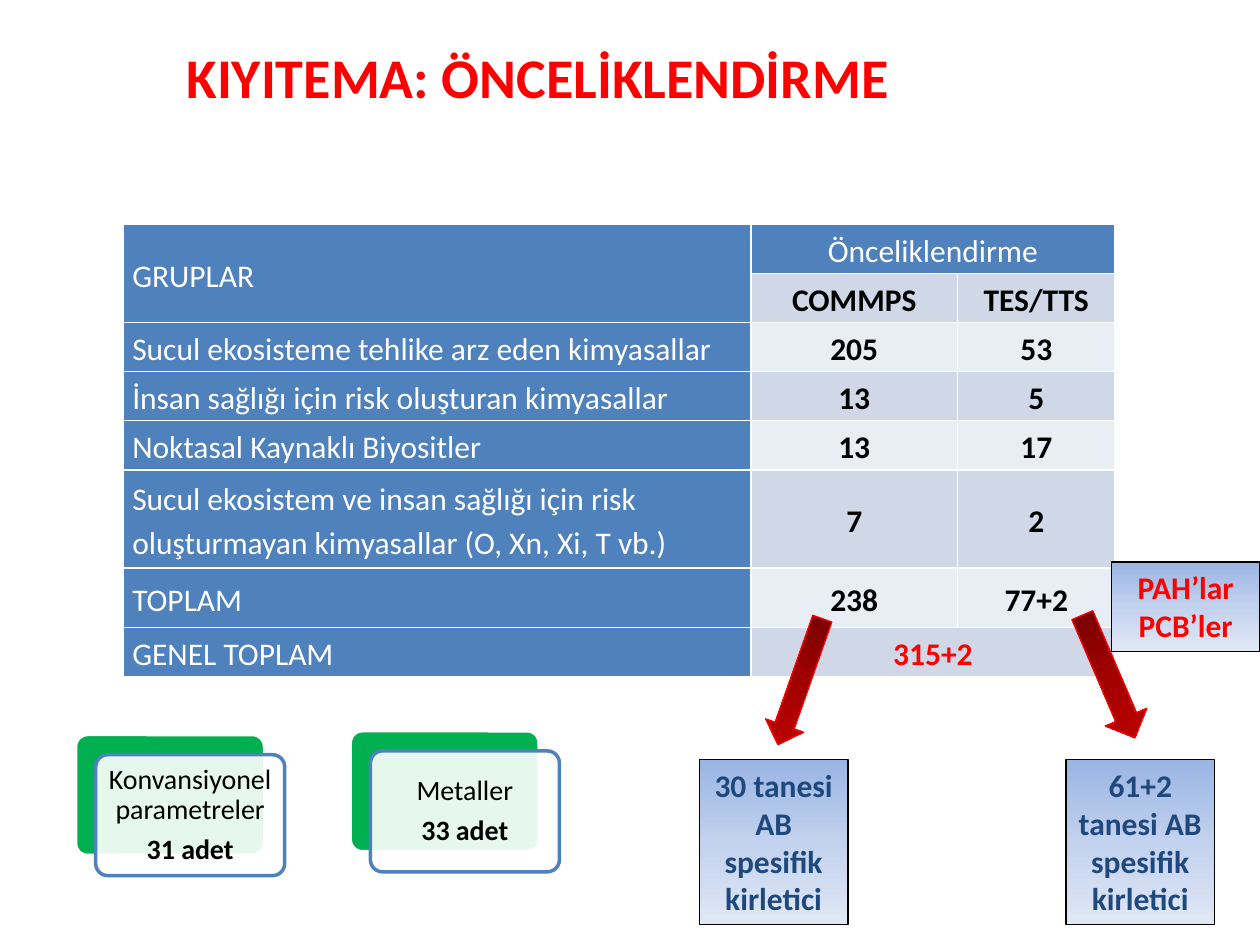
import pptx
import pptx.dml.color
import pptx.enum.shapes
import pptx.enum.text
import pptx.oxml
import pptx.oxml.ns
import pptx.util
from dataclasses import dataclass

Inches = pptx.util.Inches
Pt = pptx.util.Pt
Shape = pptx.enum.shapes.MSO_SHAPE
Align = pptx.enum.text.PP_ALIGN
Anchor = pptx.enum.text.MSO_ANCHOR
NS = pptx.oxml.ns.nsdecls("a")
qn = pptx.oxml.ns.qn


@dataclass(frozen=True)
class Theme:
    font: str = "Calibri"
    red: str = "FF0000"
    blue: str = "4F81BD"
    navy: str = "1F497D"
    green: str = "00B050"
    white: str = "FFFFFF"
    black: str = "000000"
    bands: tuple = ("E9EDF4", "D0D8E8")
    pale: tuple = ("9AB5E4", "C2D1ED", "E1E8F5")
    dark: tuple = ("720000", "A20000", "C00000")
    title: int = 32
    body: int = 18
    card: int = 16


T = Theme()

ROWS = [
    ("GRUPLAR", "Önceliklendirme", ""),
    ("", "COMMPS", "TES/TTS"),
    ("Sucul ekosisteme tehlike arz eden kimyasallar", "205", "53"),
    ("İnsan sağlığı için risk oluşturan kimyasallar", "13", "5"),
    ("Noktasal Kaynaklı Biyositler", "13", "17"),
    ("Sucul ekosistem ve insan sağlığı için risk "
     "oluşturmayan kimyasallar (O, Xn, Xi, T vb.)", "7", "2"),
    ("TOPLAM", "238", "77+2"),
    ("GENEL TOPLAM", "315+2", ""),
]
WIDTHS = (4.98, 1.64, 1.25)
HEIGHTS = (0.39, 0.39, 0.39, 0.39, 0.39, 0.78, 0.47, 0.39)


def rgb(code):
    return pptx.dml.color.RGBColor.from_string(code)


def add_run(para, text, size, color, bold=False):
    run = para.add_run()
    run.text = text
    font = run.font
    font.name, font.size, font.bold = T.font, Pt(size), bold
    font.color.rgb = rgb(color)


def set_para(frame, index, align):
    para = frame.paragraphs[0] if index == 0 else frame.add_paragraph()
    para.alignment = align
    return para


def add_form(slide, kind, at, line, width):
    form = slide.shapes.add_shape(kind, *map(Inches, at))
    form.shadow.inherit = False
    form.line.color.rgb = rgb(line)
    form.line.width = Pt(width)
    return form


def fill_fade(form, colors):
    """Fill from top to bottom with evenly spaced stops."""
    form.fill.gradient()
    old = form.element.spPr.find(qn("a:gradFill"))
    step = 100000 // (len(colors) - 1)
    stops = "".join(f'<a:gs pos="{i * step}"><a:srgbClr val="{c}"/></a:gs>'
                    for i, c in enumerate(colors))
    new = pptx.oxml.parse_xml(
        f'<a:gradFill {NS} rotWithShape="1"><a:gsLst>{stops}</a:gsLst>'
        '<a:lin ang="5400000" scaled="0"/></a:gradFill>')
    old.getparent().replace(old, new)


def add_title(slide, text):
    title = slide.shapes.title
    title.left, title.top = Inches(1.38), Inches(0.29)
    title.width, title.height = Inches(6.06), Inches(0.64)
    frame = title.text_frame
    frame.auto_size = pptx.enum.text.MSO_AUTO_SIZE.NONE
    frame.vertical_anchor = Anchor.TOP
    add_run(set_para(frame, 0, Align.LEFT), text, T.title, T.red, True)


def set_edges(cell):
    props = cell._tc.get_or_add_tcPr()
    for i, side in enumerate(("lnL", "lnR", "lnT", "lnB")):
        props.insert(i, pptx.oxml.parse_xml(
            f'<a:{side} {NS} w="12700"><a:solidFill>'
            f'<a:srgbClr val="{T.white}"/></a:solidFill></a:{side}>'))


def style_cell(cell, row, col, text):
    head = row == 0 or col == 0
    last = row == len(ROWS) - 1
    cell.fill.solid()
    cell.fill.fore_color.rgb = rgb(T.blue if head else T.bands[row % 2])
    cell.margin_left = cell.margin_right = Inches(0.07)
    cell.margin_top = cell.margin_bottom = 0
    cell.vertical_anchor = Anchor.MIDDLE
    set_edges(cell)
    if text:
        para = set_para(cell.text_frame, 0, Align.CENTER if col else Align.LEFT)
        para.line_spacing = 1.15
        color = T.white if head else T.red if last else T.black
        add_run(para, text, T.body, color, not head)


def add_grid(slide):
    frame = slide.shapes.add_table(
        len(ROWS), len(WIDTHS), Inches(0.98), Inches(1.78),
        Inches(sum(WIDTHS)), Inches(sum(HEIGHTS)))
    table = frame.table
    table.first_row = table.horz_banding = False
    for col, width in zip(table.columns, WIDTHS):
        col.width = Inches(width)
    for r, (height, texts) in enumerate(zip(HEIGHTS, ROWS)):
        table.rows[r].height = Inches(height)
        for c, text in enumerate(texts):
            style_cell(table.cell(r, c), r, c, text)
    table.cell(0, 0).merge(table.cell(1, 0))
    for r in (0, len(ROWS) - 1):
        table.cell(r, 1).merge(table.cell(r, 2))


def add_note(slide, at, lines, color):
    note = add_form(slide, Shape.RECTANGLE, at, T.black, 0.75)
    fill_fade(note, T.pale)
    frame = note.text_frame
    frame.word_wrap = True
    frame.vertical_anchor = Anchor.TOP
    for i, text in enumerate(lines):
        add_run(set_para(frame, i, Align.CENTER), text, T.body, color, True)


def add_card(slide, left, top, label, count):
    # Green back plate, then the white front plate that holds the text
    shift = 0.16
    plates = ((0, T.green, T.white), (shift, T.white, T.blue))
    for move, fill, line in plates:
        at = (left + move, top + move, 1.5, 0.96)
        plate = add_form(slide, Shape.ROUNDED_RECTANGLE, at, line, 2)
        plate.adjustments[0] = 0.1
        plate.fill.solid()
        plate.fill.fore_color.rgb = rgb(fill)
    tint = plate.element.spPr.find(qn("a:solidFill"))[0]
    tint.append(pptx.oxml.parse_xml(f'<a:alpha {NS} val="90000"/>'))
    frame = plate.text_frame
    frame.word_wrap = True
    frame.vertical_anchor = Anchor.MIDDLE
    frame.margin_left = frame.margin_right = Inches(0.06)
    frame.margin_top = frame.margin_bottom = Inches(0.06)
    for i, text in enumerate((label, count)):
        para = set_para(frame, i, Align.CENTER)
        para.line_spacing = 0.9
        para.space_after = Pt(5.5)
        add_run(para, text, T.card, T.black, i == 1)


def add_arrow(slide, at, turn):
    arrow = add_form(slide, Shape.DOWN_ARROW, at, T.red, 0.75)
    arrow.rotation = turn
    fill_fade(arrow, T.dark)


def main():
    deck = pptx.Presentation()
    deck.slide_width, deck.slide_height = Inches(10), Inches(7.5)
    slide = deck.slides.add_slide(deck.slide_layouts[5])
    add_title(slide, "KIYITEMA: ÖNCELİKLENDİRME")
    add_grid(slide)
    # Side note and parameter cards
    add_note(slide, (8.82, 4.46, 1.18, 0.71), ("PAH’lar", "PCB’ler"), T.red)
    add_card(slide, 0.6, 5.83, "Konvansiyonel parametreler", "31 adet")
    add_card(slide, 2.78, 5.8, "Metaller", "33 adet")
    # Results below the totals
    for left, count in ((5.55, "30"), (8.46, "61+2")):
        add_note(slide, (left, 6.03, 1.18, 1.31),
                 (f"{count} tanesi AB spesifik kirletici",), T.navy)
    add_arrow(slide, (6.19, 4.88, 0.32, 1.06), 19.4)
    add_arrow(slide, (8.62, 4.84, 0.36, 1.06), 336.8)
    deck.save("out.pptx")


if __name__ == "__main__":
    main()
